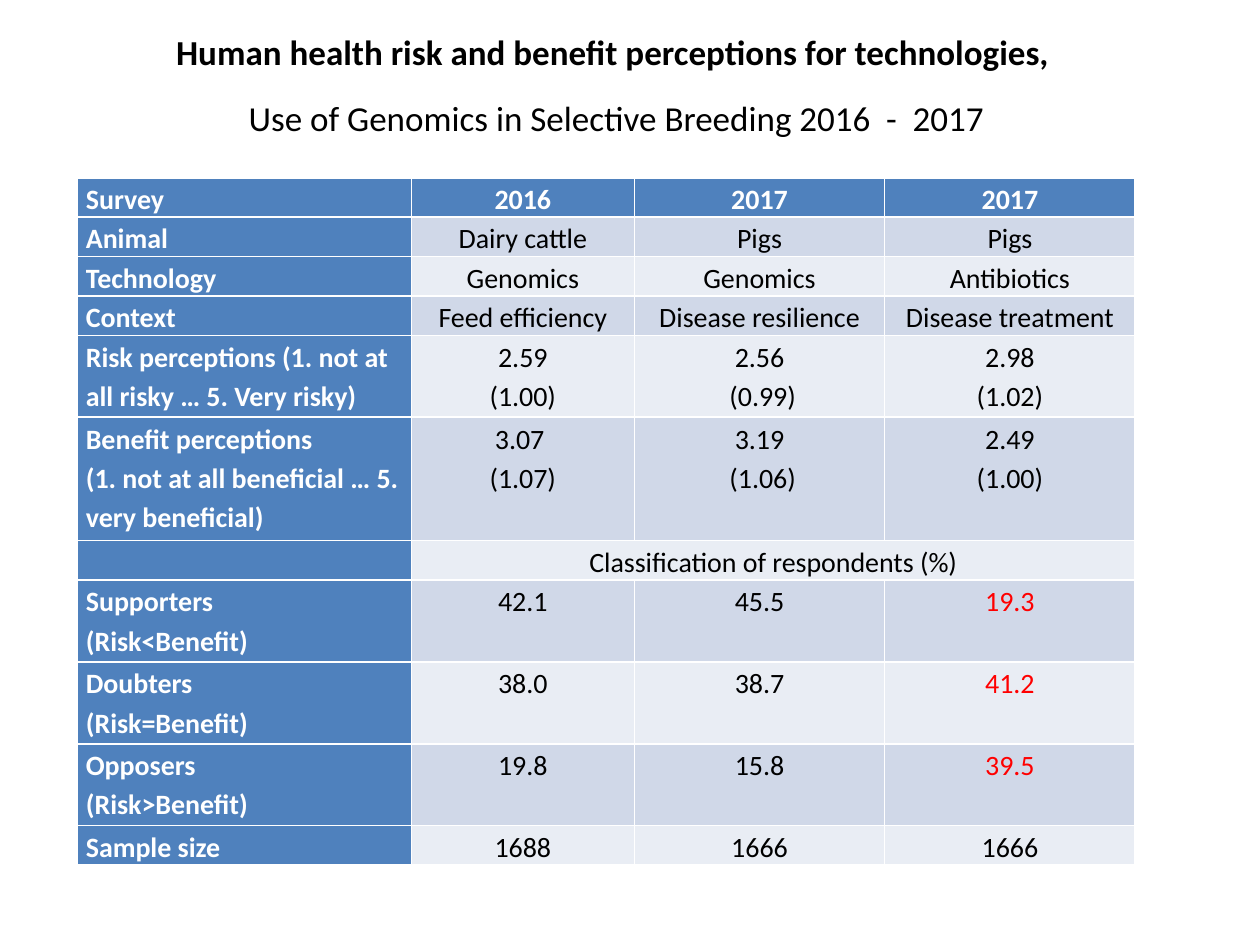
from pptx import Presentation, util as u
from pptx.dml import color
from pptx.enum import text

HEADER_BLUE, DARK_BAND, LIGHT_BAND = "4F81BD", "D0D8E8", "E9EDF4"
WHITE, BLACK, RED = "FFFFFF", "000000", "FF0000"

TITLE_LINES = [
    ("Human health risk and benefit perceptions for technologies, ", True),
    ("Use of Genomics in Selective Breeding 2016  -  2017", False),
]
COLUMN_WIDTHS = [190.9, 127.4, 143.1, 143.1]
SINGLE, DOUBLE, TRIPLE = 22.4, 46.8, 70.5
ROWS = [
    (SINGLE, ["Survey", "2016", "2017", "2017"]),
    (SINGLE, ["Animal", "Dairy cattle", "Pigs", "Pigs"]),
    (SINGLE, ["Technology", "Genomics", "Genomics", "Antibiotics"]),
    (SINGLE, ["Context", "Feed efficiency", "Disease resilience", "Disease treatment"]),
    (DOUBLE, ["Risk perceptions (1. not at all risky … 5. Very risky)",
              "2.59\n(1.00)", "2.56\n (0.99)", "2.98\n(1.02)"]),
    (TRIPLE, ["Benefit perceptions\n(1. not at all beneficial … 5. very beneficial)",
              "3.07 \n(1.07)", "3.19\n (1.06)", "2.49\n(1.00)"]),
    (SINGLE, ["", "Classification of respondents (%)", "", ""]),
    (DOUBLE, ["Supporters\n(Risk<Benefit)", "42.1", "45.5", "19.3"]),
    (DOUBLE, ["Doubters\n(Risk=Benefit)", "38.0", "38.7", "41.2"]),
    (DOUBLE, ["Opposers\n(Risk>Benefit)", "19.8", "15.8", "39.5"]),
    (SINGLE, ["Sample size", "1688", "1666", "1666"]),
]
CLASSIFICATION_ROW = 6
RED_CELLS = {(7, 3), (8, 3), (9, 3)}


def rgb(value):
    """Return the colour for a hex string."""
    return color.RGBColor.from_string(value)


def apply(target, values):
    """Set each named attribute on the target."""
    for name, value in values.items():
        setattr(target, name, value)


def format_paragraph(paragraph, size, hex_color, bold, centred, space_after=0):
    """Format a paragraph and all of its runs."""
    alignment = text.PP_ALIGN.CENTER if centred else text.PP_ALIGN.LEFT
    apply(paragraph, {"alignment": alignment, "line_spacing": 1.15,
                      "space_before": u.Pt(0), "space_after": u.Pt(space_after)})
    for run in paragraph.runs:
        apply(run.font, {"name": "Calibri", "size": u.Pt(size), "bold": bold})
        run.font.color.rgb = rgb(hex_color)


def fill_title(title):
    """Place the title and write its two lines."""
    apply(title, {"left": u.Pt(69.8), "top": u.Pt(10.1),
                  "width": u.Pt(565.2), "height": u.Pt(73.4)})
    frame = title.text_frame
    apply(frame, {"word_wrap": True, "vertical_anchor": text.MSO_ANCHOR.TOP,
                  "auto_size": text.MSO_AUTO_SIZE.NONE})
    frame.text = "\n".join(line for line, bold in TITLE_LINES)
    for paragraph, (line, bold) in zip(frame.paragraphs, TITLE_LINES):
        format_paragraph(paragraph, 20, BLACK, bold, True, 10)


def fill_cell(cell, content, row, column):
    """Write a cell and style it by its place in the table."""
    heading = row == 0 or column == 0
    band = DARK_BAND if row % 2 else LIGHT_BAND
    cell.fill.solid()
    cell.fill.fore_color.rgb = rgb(HEADER_BLUE if heading else band)
    apply(cell, {"margin_left": u.Pt(4.9), "margin_right": u.Pt(4.9),
                 "margin_top": 0, "margin_bottom": 0})
    if not content:
        return
    cell.text = content
    hex_color = WHITE if heading else RED if (row, column) in RED_CELLS else BLACK
    for paragraph in cell.text_frame.paragraphs:
        format_paragraph(paragraph, 16, hex_color, heading, column > 0)


def add_survey_table(slide):
    """Add the table of survey results."""
    height = sum(row_height for row_height, contents in ROWS)
    shape = slide.shapes.add_table(len(ROWS), len(COLUMN_WIDTHS), u.Pt(44.2), u.Pt(101.6),
                                   u.Pt(sum(COLUMN_WIDTHS)), u.Pt(height))
    table = shape.table
    table.first_col = True
    for column, width in zip(table.columns, COLUMN_WIDTHS):
        column.width = u.Pt(width)
    for row, (row_height, contents) in enumerate(ROWS):
        table.rows[row].height = u.Pt(row_height)
        for column, content in enumerate(contents):
            fill_cell(table.cell(row, column), content, row, column)
    table.cell(CLASSIFICATION_ROW, 1).merge(table.cell(CLASSIFICATION_ROW, 3))


def main():
    """Build and save the presentation."""
    presentation = Presentation()
    apply(presentation, {"slide_width": u.Pt(720), "slide_height": u.Pt(540)})
    slide = presentation.slides.add_slide(presentation.slide_layouts[5])
    add_survey_table(slide)
    fill_title(slide.shapes.title)
    presentation.save("out.pptx")


if __name__ == "__main__":
    main()
